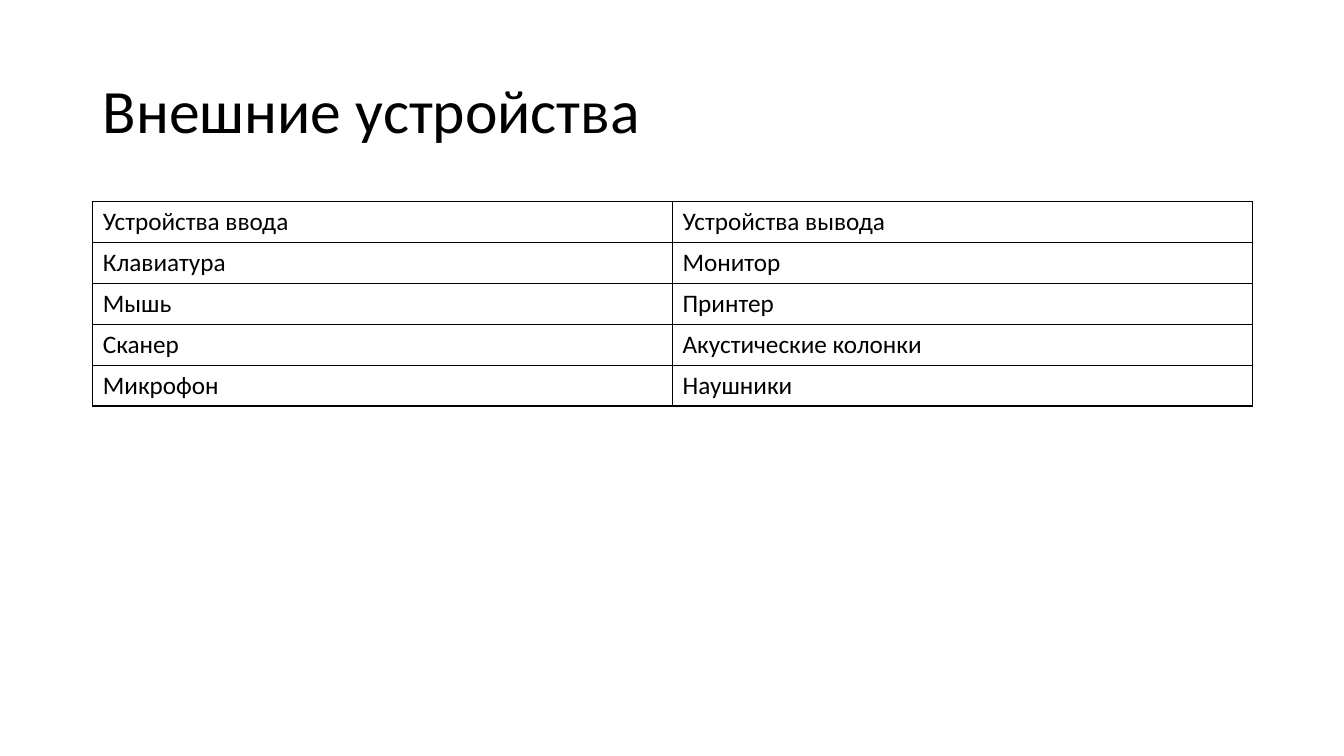
from dataclasses import dataclass

from lxml import etree
from pptx import Presentation
from pptx.dml.color import RGBColor
from pptx.enum.text import MSO_ANCHOR, PP_ALIGN
from pptx.oxml.ns import qn
from pptx.slide import Slide
from pptx.table import _Cell
from pptx.text.text import TextFrame
from pptx.util import Inches, Pt

LEFT = PP_ALIGN.LEFT
MIDDLE = MSO_ANCHOR.MIDDLE

COLOURS = {"text": "000000", "border": "000000"}
FONT_NAME = "Calibri"
SLIDE_WIDTH, SLIDE_HEIGHT = Inches(13.33), Inches(7.5)
MARGIN_LEFT, CONTENT_WIDTH = Inches(0.92), Inches(11.5)
TITLE_TOP, TITLE_HEIGHT = Inches(0.4), Inches(1.45)
TABLE_TOP, ROW_HEIGHT = Inches(2), Inches(0.405)
BORDER_WIDTH = Pt(1)
BORDER_TAGS = ("a:lnL", "a:lnR", "a:lnT", "a:lnB")
TITLE_FORMAT = {"name": FONT_NAME, "size": Pt(44), "bold": False}
CELL_FORMAT = {"name": FONT_NAME, "size": Pt(18), "bold": False}


@dataclass(frozen=True)
class DeviceColumn:
    heading: str
    devices: tuple[str, ...]

    def texts(self) -> tuple[str, ...]:
        return (self.heading, *self.devices)


DEVICE_COLUMNS = (
    DeviceColumn("Устройства ввода", ("Клавиатура", "Мышь", "Сканер", "Микрофон")),
    DeviceColumn(
        "Устройства вывода",
        ("Монитор", "Принтер", "Акустические колонки", "Наушники"),
    ),
)


def write_text(frame: TextFrame, text: str, font_format: dict) -> None:
    frame.text = text
    paragraph = frame.paragraphs[0]
    paragraph.alignment = LEFT
    font = paragraph.runs[0].font
    for attribute, value in font_format.items():
        setattr(font, attribute, value)
    font.color.rgb = RGBColor.from_string(COLOURS["text"])


def add_borders(cell: _Cell) -> None:
    properties = cell._tc.get_or_add_tcPr()
    for position, tag in enumerate(BORDER_TAGS):
        line = etree.Element(qn(tag), w=str(BORDER_WIDTH))
        fill = etree.SubElement(line, qn("a:solidFill"))
        etree.SubElement(fill, qn("a:srgbClr"), val=COLOURS["border"])
        properties.insert(position, line)


def add_title(slide: Slide, text: str) -> None:
    title = slide.shapes.title
    title.left, title.top = MARGIN_LEFT, TITLE_TOP
    title.width, title.height = CONTENT_WIDTH, TITLE_HEIGHT
    write_text(title.text_frame, text, TITLE_FORMAT)
    title.text_frame.vertical_anchor = MIDDLE
    title.text_frame.paragraphs[0].line_spacing = 0.9


def add_device_table(slide: Slide, columns: tuple[DeviceColumn, ...]) -> None:
    row_count = len(columns[0].texts())
    table = slide.shapes.add_table(
        row_count, len(columns), MARGIN_LEFT, TABLE_TOP,
        CONTENT_WIDTH, ROW_HEIGHT * row_count,
    ).table
    table.horz_banding = False
    for column_index, column in enumerate(columns):
        for row_index, text in enumerate(column.texts()):
            cell = table.cell(row_index, column_index)
            write_text(cell.text_frame, text, CELL_FORMAT)
            cell.fill.background()
            add_borders(cell)


def main() -> None:
    presentation = Presentation()
    presentation.slide_width = SLIDE_WIDTH
    presentation.slide_height = SLIDE_HEIGHT
    title_only_layout = presentation.slide_layouts[5]
    slide = presentation.slides.add_slide(title_only_layout)
    add_title(slide, "Внешние устройства")
    add_device_table(slide, DEVICE_COLUMNS)
    presentation.save("out.pptx")


if __name__ == "__main__":
    main()
